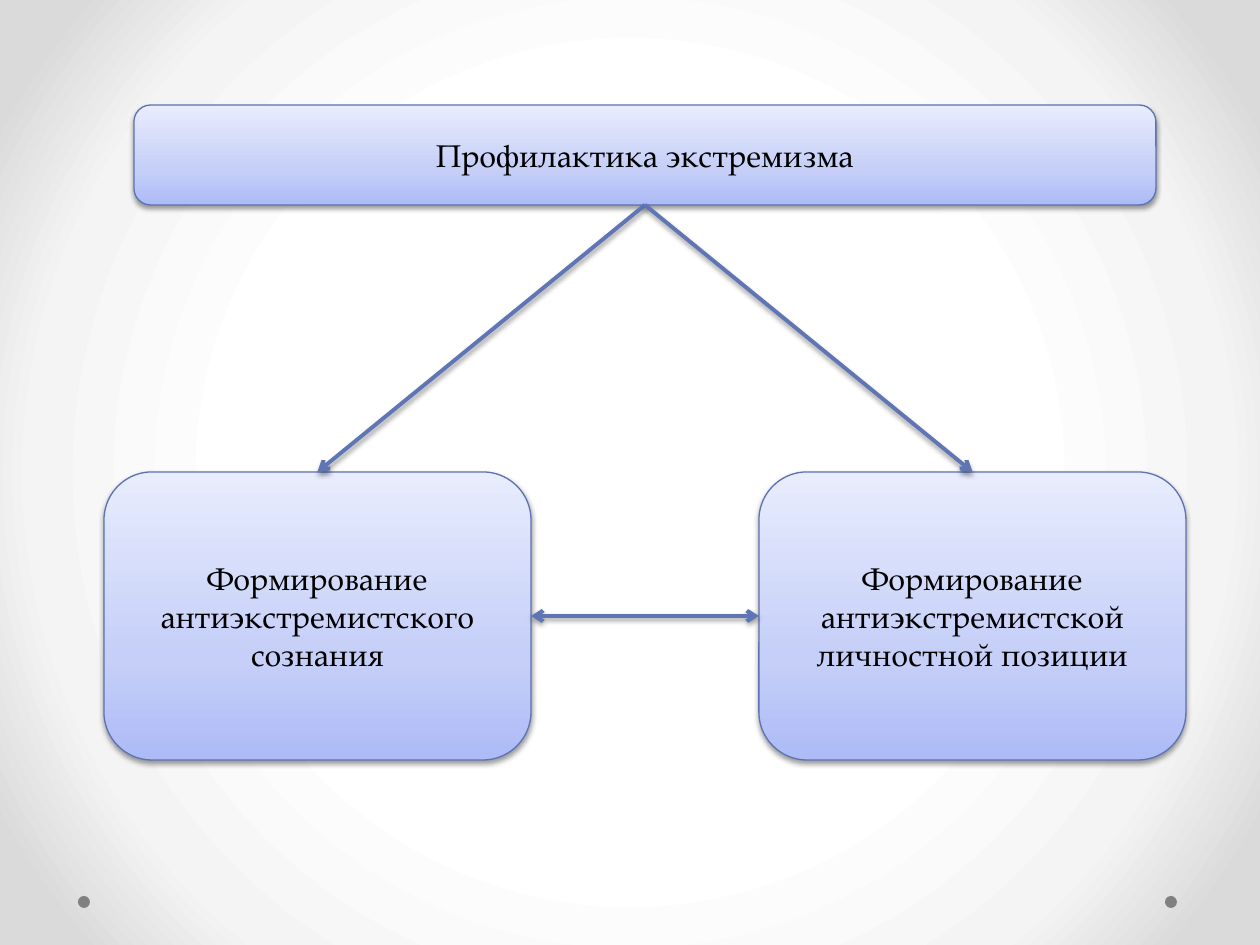
from dataclasses import dataclass

from lxml import etree
from pptx import Presentation
from pptx.dml.color import RGBColor
from pptx.enum.shapes import MSO_CONNECTOR, MSO_SHAPE
from pptx.enum.text import MSO_ANCHOR, PP_ALIGN
from pptx.oxml import parse_xml
from pptx.oxml.ns import nsdecls, qn
from pptx.util import Emu, Pt

ROUNDED, OVAL = MSO_SHAPE.ROUNDED_RECTANGLE, MSO_SHAPE.OVAL
STRAIGHT = MSO_CONNECTOR.STRAIGHT
MIDDLE, CENTER = MSO_ANCHOR.MIDDLE, PP_ALIGN.CENTER
TOP, LEFT, BOTTOM, RIGHT = range(4)

PX_PER_INCH = 126
FONT = "TeX Gyre Pagella"
BACK_STOPS = [(50, "FFFFFF"), (76, "F4F4F4"), (92, "DADADA")]
BOX_STOPS = [(0, "ADBBF6"), (35, "C5CFF8"), (100, "E8ECFD")]
RADIAL = ('<a:path path="circle"><a:fillToRect l="50000" t="50000" '
          'r="50000" b="50000"/></a:path>')
UPWARD = '<a:lin ang="16200000" scaled="0"/>'


@dataclass
class Box:
    text: str
    x: int
    y: int
    w: int
    h: int


@dataclass
class Arrow:
    start: int
    start_side: int
    end: int
    end_side: int
    ends: tuple


def px(n: int) -> Emu:
    return Emu(round(n * 914400 / PX_PER_INCH))


def color(value: str) -> RGBColor:
    return RGBColor.from_string(value)


def set_gradient(fill, parent, stops: list, direction: str) -> None:
    """Give a parent element a gradient with any number of stops."""
    fill.background()
    gs = "".join(f'<a:gs pos="{pos * 1000}"><a:srgbClr val="{c}"/></a:gs>'
                 for pos, c in stops)
    parent.replace(parent.find(qn("a:noFill")), parse_xml(
        f'<a:gradFill {nsdecls("a")} rotWithShape="1"><a:gsLst>{gs}</a:gsLst>'
        f'{direction}</a:gradFill>'))


def add_shadow(sp) -> None:
    sp.element.spPr.append(parse_xml(
        f'<a:effectLst {nsdecls("a")}><a:outerShdw blurRad="{Pt(3.1)}" '
        f'dist="{Pt(1.6)}" dir="5400000" rotWithShape="0">'
        '<a:srgbClr val="000000"><a:alpha val="38000"/></a:srgbClr>'
        '</a:outerShdw></a:effectLst>'))


def set_line(sp, value: str, width: float) -> None:
    sp.line.color.rgb = color(value)
    sp.line.width = Pt(width)


def add_dot(s, x: int, y: int, size: int):
    sp = s.shapes.add_shape(OVAL, px(x), px(y), px(size), px(size))
    sp.shadow.inherit = False
    sp.fill.solid()
    sp.fill.fore_color.rgb = color("808080")
    sp.line.fill.background()


def add_box(s, box: Box):
    sp = s.shapes.add_shape(ROUNDED, px(box.x), px(box.y), px(box.w), px(box.h))
    set_gradient(sp.fill, sp.element.spPr, BOX_STOPS, UPWARD)
    set_line(sp, "5C72B2", 0.75)
    add_shadow(sp)
    tf = sp.text_frame
    tf.word_wrap = True
    tf.vertical_anchor = MIDDLE
    p = tf.paragraphs[0]
    p.alignment = CENTER
    r = p.add_run()
    r.text = box.text
    for name, value in {"name": FONT, "size": Pt(18)}.items():
        setattr(r.font, name, value)
    r.font.color.rgb = color("000000")
    return sp


def add_arrow(s, arrow: Arrow, boxes: list) -> None:
    c = s.shapes.add_connector(STRAIGHT, 0, 0, 0, 0)
    c.begin_connect(boxes[arrow.start], arrow.start_side)
    c.end_connect(boxes[arrow.end], arrow.end_side)
    set_line(c, "6076B4", 2.25)
    ln = c.element.spPr.find(qn("a:ln"))
    for end in arrow.ends:
        etree.SubElement(ln, qn(f"a:{end}"), type="arrow")
    add_shadow(c)


BOXES = [
    Box("Профилактика экстремизма", 134, 105, 1022, 100),
    Box("Формирование антиэкстремистского сознания", 104, 472, 427, 288),
    Box("Формирование антиэкстремистской личностной позиции", 759, 472, 427, 288),
]
ARROWS = [
    Arrow(0, BOTTOM, 1, TOP, ("tailEnd",)),
    Arrow(0, BOTTOM, 2, TOP, ("tailEnd",)),
    Arrow(1, RIGHT, 2, LEFT, ("headEnd", "tailEnd")),
]


def main() -> None:
    prs = Presentation()
    prs.slide_width, prs.slide_height = px(1260), px(945)
    s = prs.slides.add_slide(prs.slide_layouts[6])

    # Background and corner dots
    fill = s.background.fill
    set_gradient(fill, s.element.find(f".//{qn('p:bgPr')}"), BACK_STOPS, RADIAL)
    for x in (1165, 78):
        add_dot(s, x, 896, 12)

    # Boxes and the arrows that join them
    boxes = [add_box(s, box) for box in BOXES]
    for arrow in ARROWS:
        add_arrow(s, arrow, boxes)

    prs.save("out.pptx")


if __name__ == "__main__":
    main()
